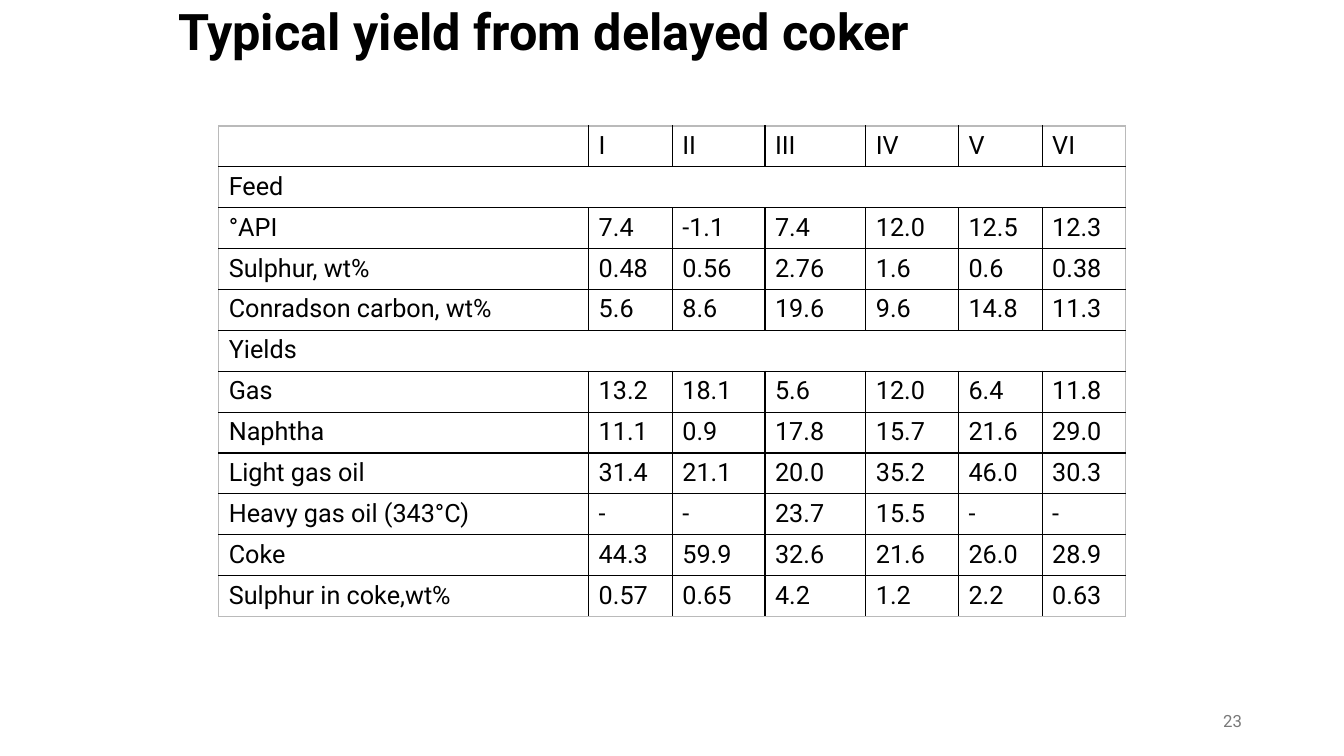
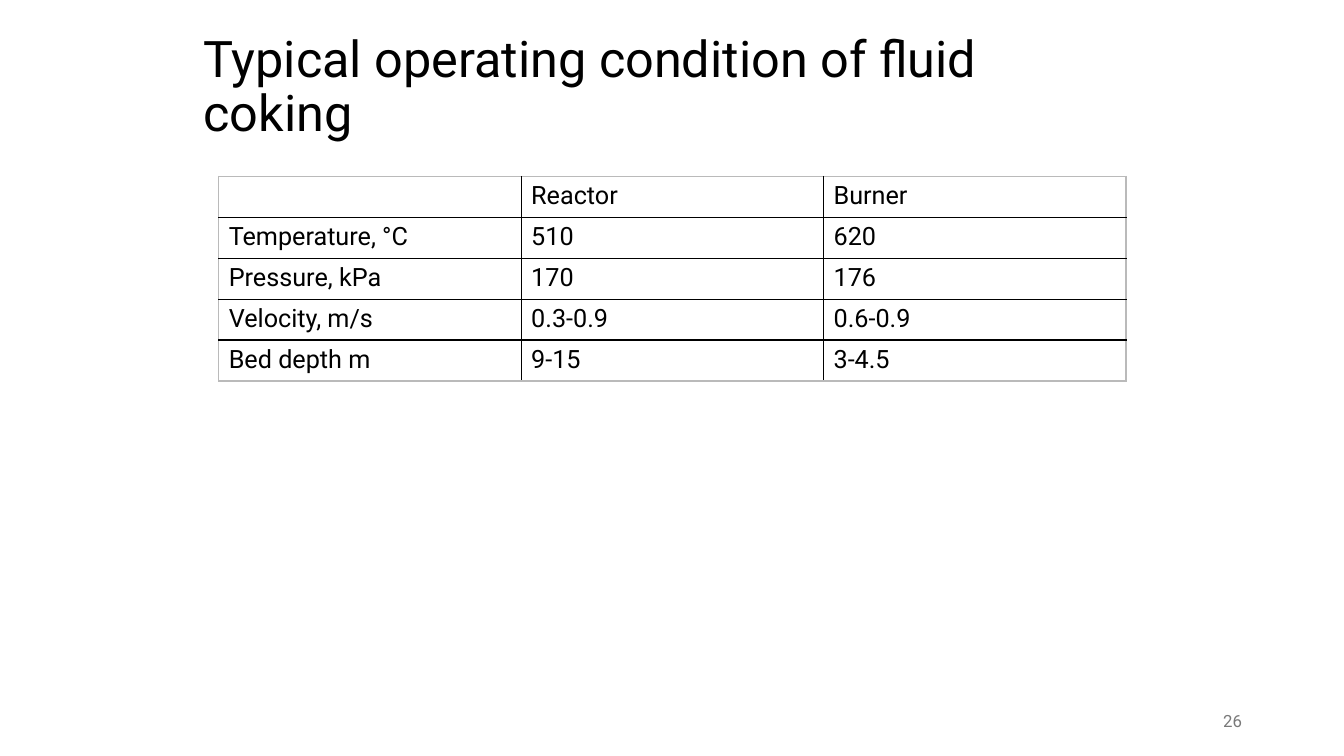
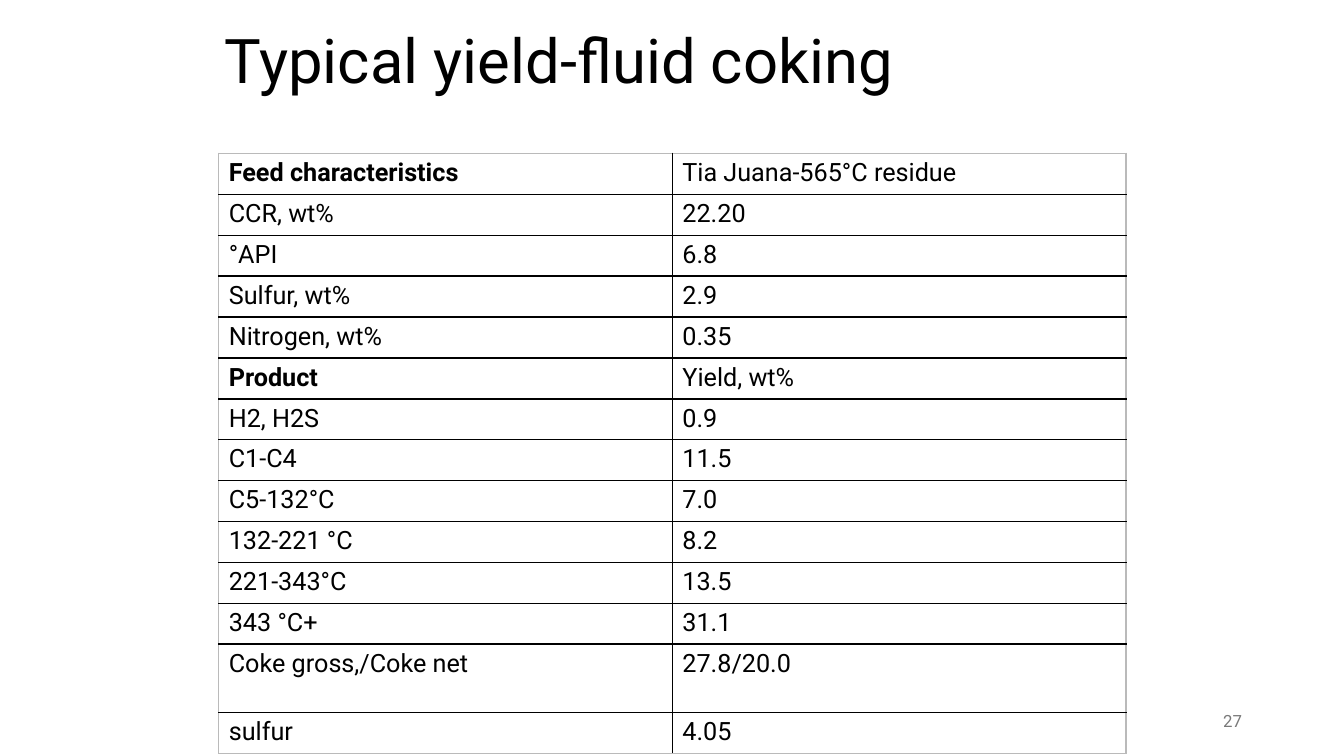
from lxml.etree import SubElement
from pptx import Presentation
from pptx.dml.color import RGBColor
from pptx.enum.shapes import MSO_SHAPE
from pptx.enum.text import MSO_ANCHOR, PP_ALIGN
from pptx.oxml.ns import qn
from pptx.util import Inches, Pt

COLORS = {"text": "000000", "number": "797979", "paper": "FFFFFF",
          "grid": "000000", "frame": "BABABA"}
FONT = "Roboto"
TABLE_LEFT, TABLE_WIDTH = 2.17, 9
NUMBER_BOX = (9.42, 6.95, 3, 0.4)

# A row with a single entry is a section heading across the whole table.
SLIDES = [
    {
        "title": "Typical yield from delayed coker",
        "title_box": (1.67, 0, 10, 0.67), "title_size": 36,
        "title_bold": True, "title_fill": "paper",
        "number": "23", "top": 1.25, "height": 4.87,
        "columns": [3.67, 0.83, 0.92, 1, 0.92, 0.83, 0.83],
        "rows": [
            ("", "I", "II", "III", "IV", "V", "VI"),
            ("Feed",),
            ("°API", "7.4", "-1.1", "7.4", "12.0", "12.5", "12.3"),
            ("Sulphur, wt%", "0.48", "0.56", "2.76", "1.6", "0.6", "0.38"),
            ("Conradson carbon, wt%", "5.6", "8.6", "19.6", "9.6", "14.8", "11.3"),
            ("Yields",),
            ("Gas", "13.2", "18.1", "5.6", "12.0", "6.4", "11.8"),
            ("Naphtha", "11.1", "0.9", "17.8", "15.7", "21.6", "29.0"),
            ("Light gas oil", "31.4", "21.1", "20.0", "35.2", "46.0", "30.3"),
            ("Heavy gas oil (343°C)", "-", "-", "23.7", "15.5", "-", "-"),
            ("Coke", "44.3", "59.9", "32.6", "21.6", "26.0", "28.9"),
            ("Sulphur in coke,wt%", "0.57", "0.65", "4.2", "1.2", "2.2", "0.63"),
        ],
    },
    {
        "title": "Typical operating condition of fluid coking",
        "title_box": (1.92, 0.25, 9.42, 1.25), "title_size": 36,
        "number": "26", "top": 1.75, "height": 2.03,
        "columns": [3, 3, 3],
        "rows": [
            ("", "Reactor", "Burner"),
            ("Temperature, °C", "510", "620"),
            ("Pressure, kPa", "170", "176"),
            ("Velocity, m/s", "0.3-0.9", "0.6-0.9"),
            ("Bed depth m", "9-15", "3-4.5"),
        ],
    },
    {
        "title": "Typical yield-fluid coking",
        "title_box": (2.13, 0.01, 9, 1.25), "title_size": 44,
        "number": "27", "top": 1.52, "height": 5.95,
        "columns": [4.5, 4.5],
        "bold": {"Feed characteristics", "Product"},
        "special_heights": {6: 0.39, 12: 0.68},
        "rows": [
            ("Feed characteristics", "Tia Juana-565°C residue"),
            ("CCR, wt%", "22.20"),
            ("°API", "6.8"),
            ("Sulfur, wt%", "2.9"),
            ("Nitrogen, wt%", "0.35"),
            ("Product", "Yield, wt%"),
            ("H2, H2S", "0.9"),
            ("C1-C4", "11.5"),
            ("C5-132°C", "7.0"),
            ("132-221 °C", "8.2"),
            ("221-343°C", "13.5"),
            ("343 °C+", "31.1"),
            ("Coke gross,/Coke net", "27.8/20.0"),
            ("sulfur", "4.05"),
        ],
    },
]


def style_font(font, size, color="text", bold=False):
    font.name = FONT
    font.size = Pt(size)
    font.bold = bold
    font.color.rgb = RGBColor.from_string(COLORS[color])


def paint(fill, color):
    fill.solid()
    fill.fore_color.rgb = RGBColor.from_string(COLORS[color])


def add_text(slide, box, text, size, color="text", bold=False,
             align=PP_ALIGN.LEFT, line_spacing=1.0, fill=None):
    area = tuple(map(Inches, box))
    if fill:
        shape = slide.shapes.add_shape(MSO_SHAPE.RECTANGLE, *area)
        shape.shadow.inherit = False
        shape.line.fill.background()
        paint(shape.fill, fill)
    else:
        shape = slide.shapes.add_textbox(*area)
    frame = shape.text_frame
    frame.word_wrap = True
    frame.vertical_anchor = MSO_ANCHOR.MIDDLE
    frame.text = text
    paragraph = frame.paragraphs[0]
    paragraph.alignment = align
    paragraph.line_spacing = line_spacing
    style_font(paragraph.runs[0].font, size, color, bold)


def draw_border(cell, side, outer):
    """Draw one side (L, R, T or B): grey on the table frame, black inside."""
    line = SubElement(cell._tc.get_or_add_tcPr(), qn(f"a:ln{side}"), w=str(Pt(1)))
    fill = SubElement(line, qn("a:solidFill"))
    SubElement(fill, qn("a:srgbClr"), val=COLORS["frame" if outer else "grid"])


def add_data_table(slide, spec):
    rows, columns = spec["rows"], spec["columns"]
    last_row, last_column = len(rows) - 1, len(columns) - 1
    special = spec.get("special_heights", {})
    row_height = (spec["height"] - sum(special.values())) / (len(rows) - len(special))
    table = slide.shapes.add_table(
        len(rows), len(columns), Inches(TABLE_LEFT), Inches(spec["top"]),
        Inches(TABLE_WIDTH), Inches(spec["height"])).table
    table.first_row = table.horz_banding = False
    for column, width in zip(table.columns, columns):
        column.width = Inches(width)

    for r, values in enumerate(rows):
        table.rows[r].height = Inches(special.get(r, row_height))
        is_section = len(values) == 1
        if is_section:
            table.cell(r, 0).merge(table.cell(r, last_column))
        for c in range(len(columns)):
            cell = table.cell(r, c)
            if not cell.is_spanned:
                draw_border(cell, "L", c == 0)
                draw_border(cell, "R", is_section or c == last_column)
            draw_border(cell, "T", r == 0)
            draw_border(cell, "B", r == last_row)
            paint(cell.fill, "paper")
            if c < len(values):
                cell.text = values[c]
                paragraph = cell.text_frame.paragraphs[0]
                style_font(paragraph.font, 18)
                for run in paragraph.runs:
                    style_font(run.font, 18, bold=values[c] in spec.get("bold", ()))


def main():
    presentation = Presentation()
    presentation.slide_width, presentation.slide_height = Inches(40 / 3), Inches(7.5)
    for spec in SLIDES:
        slide = presentation.slides.add_slide(presentation.slide_layouts[6])
        add_text(slide, spec["title_box"], spec["title"], spec["title_size"],
                 bold=spec.get("title_bold", False), line_spacing=0.9,
                 fill=spec.get("title_fill"))
        add_data_table(slide, spec)
        add_text(slide, NUMBER_BOX, spec["number"], 12, "number", align=PP_ALIGN.RIGHT)
    presentation.save("out.pptx")


if __name__ == "__main__":
    main()
